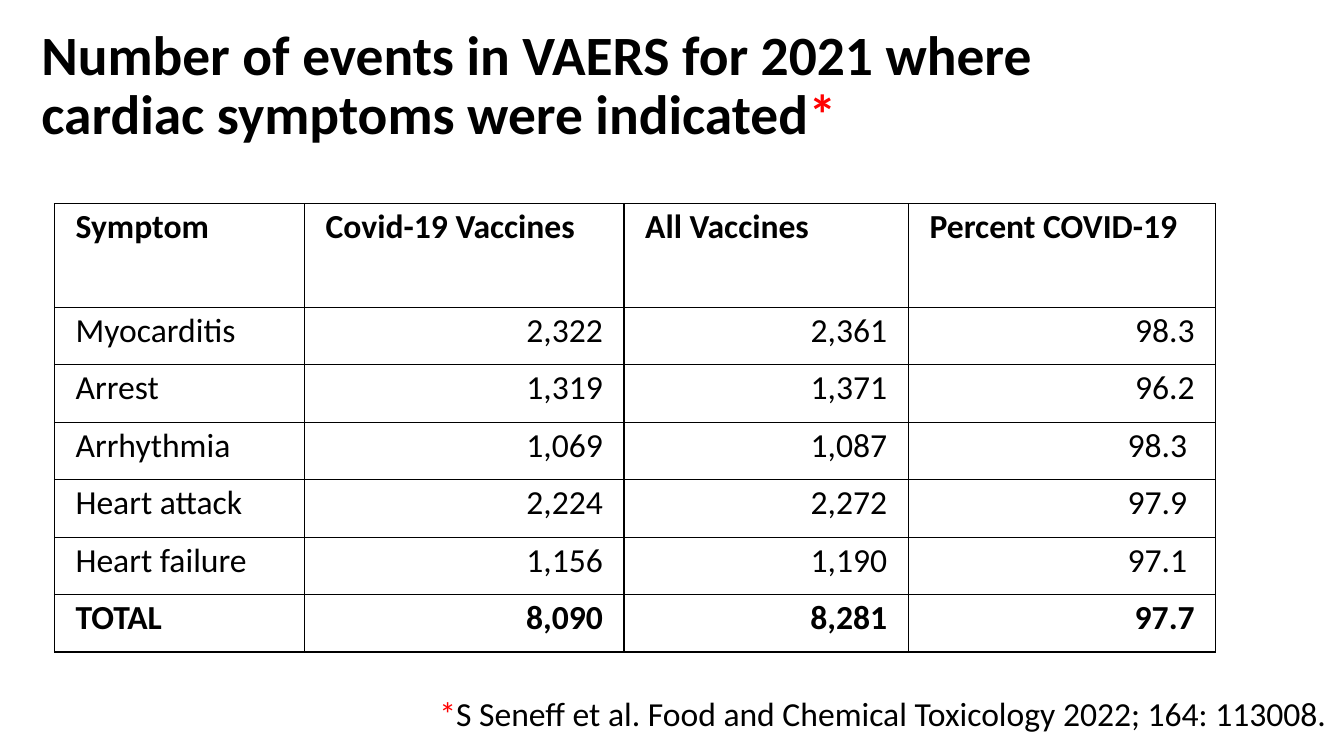
from lxml.etree import SubElement
from pptx import Presentation
from pptx.dml.color import RGBColor
from pptx.enum.text import MSO_ANCHOR, MSO_AUTO_SIZE, PP_ALIGN
from pptx.oxml.ns import qn
from pptx.util import Inches, Pt

COLORS = {"text": "000000", "mark": "FF0000", "border": "000000"}
FONT = "Calibri"
COLUMNS = [2.48, 3.17, 2.82, 3.05]
HEADER_HEIGHT, ROW_HEIGHT = 1.03, 0.57
EVENTS = [
    ("Symptom", "Covid-19 Vaccines", "All Vaccines", "Percent COVID-19"),
    ("Myocarditis", "2,322", "2,361", "98.3"),
    ("Arrest", "1,319", "1,371", "96.2"),
    ("Arrhythmia", "1,069", "1,087", "98.3 "),
    ("Heart attack", "2,224", "2,272", "97.9 "),
    ("Heart failure", "1,156", "1,190", "97.1 "),
    ("TOTAL", "8,090", "8,281", "97.7"),
]


def add_run(p, text, size=24, color="text", bold=False):
    r = p.add_run()
    r.text = text
    r.font.name = FONT
    r.font.size = Pt(size)
    r.font.bold = bold
    r.font.color.rgb = RGBColor.from_string(COLORS[color])


def place(sp, box):
    sp.left, sp.top, sp.width, sp.height = (Inches(v) for v in box)


def add_title(s, box):
    sp = s.shapes.title
    place(sp, box)
    tf = sp.text_frame
    tf.word_wrap = True
    tf.auto_size = MSO_AUTO_SIZE.NONE
    tf.vertical_anchor = MSO_ANCHOR.TOP
    tf.margin_top = Inches(0.11)
    p = tf.paragraphs[0]
    p.alignment = PP_ALIGN.LEFT
    p.line_spacing = 0.9
    add_run(p, "Number of events in VAERS for 2021 where cardiac symptoms were indicated",
            39.6, bold=True)
    add_run(p, "*", 39.6, "mark", True)


def add_borders(cell):
    tcPr = cell._tc.get_or_add_tcPr()
    for side in ("lnL", "lnR", "lnT", "lnB"):
        ln = SubElement(tcPr, qn(f"a:{side}"), w=str(Pt(1)))
        fill = SubElement(ln, qn("a:solidFill"))
        SubElement(fill, qn("a:srgbClr"), val=COLORS["border"])


def fill_cell(cell, text, bold, align):
    add_borders(cell)
    cell.fill.background()
    cell.margin_left = cell.margin_right = Inches(0.21)
    cell.margin_top, cell.margin_bottom = Inches(0.03), 0
    p = cell.text_frame.paragraphs[0]
    p.alignment = align
    add_run(p, text, bold=bold)


def add_events_table(s, left, top):
    heights = [HEADER_HEIGHT] + [ROW_HEIGHT] * (len(EVENTS) - 1)
    box = (left, top, sum(COLUMNS), sum(heights))
    table = s.shapes.add_table(len(EVENTS), len(COLUMNS), *map(Inches, box)).table
    table.first_row = table.horz_banding = False
    for column, width in zip(table.columns, COLUMNS):
        column.width = Inches(width)
    for i, (row, height) in enumerate(zip(table.rows, heights)):
        row.height = Inches(height)
        for j, text in enumerate(EVENTS[i]):
            align = PP_ALIGN.RIGHT if i and j else PP_ALIGN.LEFT
            fill_cell(table.cell(i, j), text, i in (0, len(EVENTS) - 1), align)


def add_citation(s, box):
    tf = s.shapes.add_textbox(*map(Inches, box)).text_frame
    tf.word_wrap = False
    tf.auto_size = MSO_AUTO_SIZE.SHAPE_TO_FIT_TEXT
    p = tf.paragraphs[0]
    add_run(p, "*", color="mark")
    add_run(p, "S Seneff et al. Food and Chemical Toxicology 2022; 164: 113008.")


def main():
    prs = Presentation()
    prs.slide_width, prs.slide_height = Inches(13.33), Inches(7.5)
    s = prs.slides.add_slide(prs.slide_layouts[5])
    add_title(s, (0.31, 0.16, 10.8, 2.03))
    add_events_table(s, 0.54, 2.02)
    add_citation(s, (4.26, 6.83, 9.07, 0.5))
    prs.save("out.pptx")


if __name__ == "__main__":
    main()
